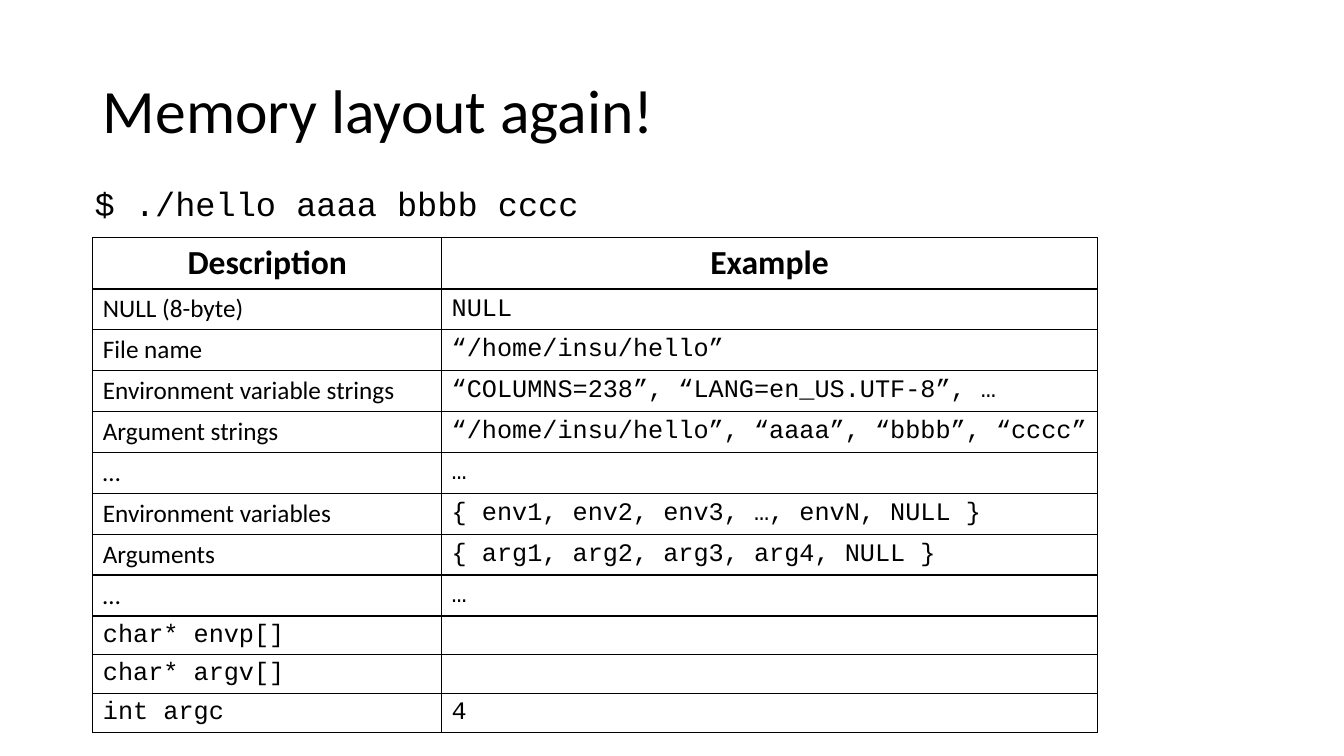
from dataclasses import dataclass

from lxml.etree import SubElement
from pptx import Presentation
from pptx.dml.color import RGBColor
from pptx.enum.text import MSO_ANCHOR as Anchor, MSO_AUTO_SIZE as Fit, PP_ALIGN as Align
from pptx.oxml.ns import qn
from pptx.util import Cm, Pt


@dataclass(frozen=True)
class Theme:
    ink: RGBColor = RGBColor(0, 0, 0)
    sans: str = "Calibri"
    mono: str = "Courier New"
    title: int = 44
    head: int = 24
    cell: int = 18
    line: int = 1


THEME = Theme()

HEADS = ("Description", "Example")
STACK = [
    ("NULL (8-byte)", "NULL"),
    ("File name", "“/home/insu/hello”"),
    ("Environment variable strings", "“COLUMNS=238”, “LANG=en_US.UTF-8”, …"),
    ("Argument strings", "“/home/insu/hello”, “aaaa”, “bbbb”, “cccc”"),
    ("…", "…"),
    ("Environment variables", "{ env1, env2, env3, …, envN, NULL }"),
    ("Arguments", "{ arg1, arg2, arg3, arg4, NULL }"),
    ("…", "…"),
]
PARAMS = [("char* envp[]", ""), ("char* argv[]", ""), ("int argc", "4")]


def write(frame, text, size, font=THEME.sans, bold=False, align=Align.LEFT,
          line=None, before=None):
    para = frame.paragraphs[0]
    para.alignment = align
    if line is not None:
        para.line_spacing = line
    if before is not None:
        para.space_before = Pt(before)
    if not text:
        # An empty cell keeps its row height through the end mark's font.
        end = SubElement(para._p, qn("a:endParaRPr"), sz=str(size * 100))
        SubElement(end, qn("a:latin"), typeface=font)
        return
    run = para.add_run()
    run.text = text
    run.font.size = Pt(size)
    run.font.name = font
    run.font.bold = bold
    run.font.color.rgb = THEME.ink


def place(shape, box, anchor):
    shape.left, shape.top, shape.width, shape.height = map(Cm, box)
    shape.text_frame.word_wrap = True
    shape.text_frame.auto_size = Fit.NONE
    shape.text_frame.vertical_anchor = anchor


def add_title(slide, box):
    title = slide.shapes.title
    place(title, box, Anchor.MIDDLE)
    write(title.text_frame, "Memory layout again!", THEME.title, line=0.9)


def add_shell(slide, box):
    """Put the shell command in the body placeholder, without a bullet."""
    body = slide.placeholders[1]
    place(body, box, Anchor.TOP)
    write(body.text_frame, "$ ./hello aaaa bbbb cccc", THEME.head, THEME.mono,
          line=0.9, before=10)
    props = body.text_frame.paragraphs[0]._p.get_or_add_pPr()
    props.set("marL", "0")
    props.set("indent", "0")
    SubElement(props, qn("a:buNone"))


def frame_cell(cell):
    """Draw all four borders and clear the fill."""
    props = cell._tc.get_or_add_tcPr()
    for side in "LRTB":
        line = SubElement(props, qn(f"a:ln{side}"), w=str(Pt(THEME.line)))
        fill = SubElement(line, qn("a:solidFill"))
        SubElement(fill, qn("a:srgbClr"), val=str(THEME.ink))
    cell.fill.background()


def add_stack(slide, box):
    left, top, width, height = box
    head = dict(size=THEME.head, bold=True, align=Align.CENTER)
    sans = dict(size=THEME.cell)
    mono = dict(size=THEME.cell, font=THEME.mono)
    rows = [(HEADS, (head, head), 1.29)]
    rows += [(texts, (sans, mono), 1.03) for texts in STACK]
    rows += [(texts, (mono, mono), 0.98) for texts in PARAMS]

    table = slide.shapes.add_table(
        len(rows), len(HEADS), Cm(left), Cm(top), Cm(width), Cm(height)).table
    table.first_row = table.horz_banding = False
    first = 8.79
    for col, wide in zip(table.columns, (first, width - first)):
        col.width = Cm(wide)
    for r, (texts, styles, tall) in enumerate(rows):
        table.rows[r].height = Cm(tall)
        for c, (text, style) in enumerate(zip(texts, styles)):
            cell = table.cell(r, c)
            frame_cell(cell)
            cell.vertical_anchor = Anchor.MIDDLE
            write(cell.text_frame, text, **style)


def main():
    deck = Presentation()
    deck.slide_width, deck.slide_height = Cm(33.87), Cm(19.05)
    slide = deck.slides.add_slide(deck.slide_layouts[1])
    add_title(slide, (2.34, 1.02, 29.21, 3.68))
    add_shell(slide, (2.13, 4.6, 29.21, 12.09))
    add_stack(slide, (2.34, 5.99, 25.32, 12.47))
    deck.save("out.pptx")


if __name__ == "__main__":
    main()
